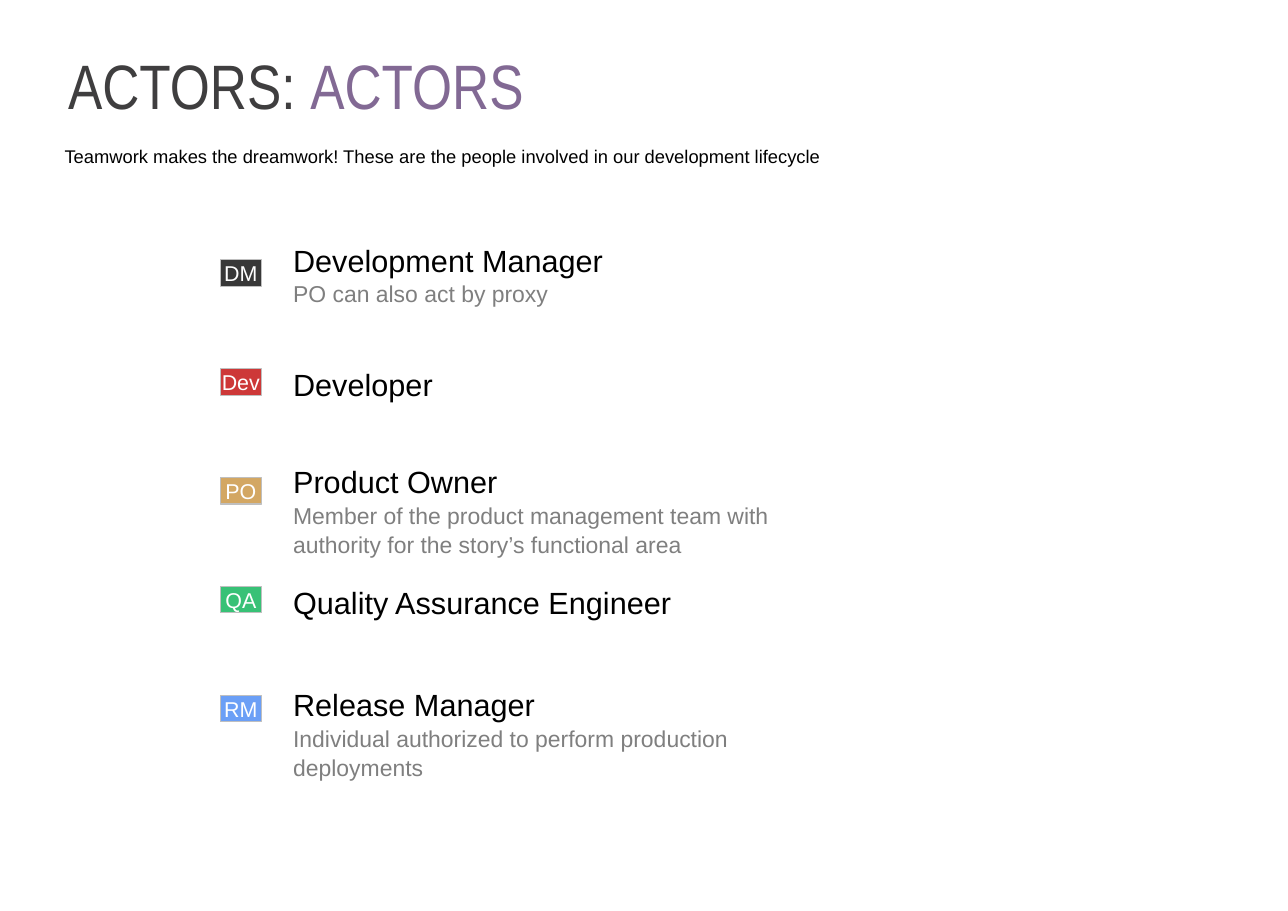
from lxml import etree
from pptx import Presentation
from pptx.dml.color import RGBColor
from pptx.enum.shapes import MSO_SHAPE
from pptx.enum.text import MSO_ANCHOR, PP_ALIGN
from pptx.oxml.ns import qn
from pptx.util import Cm, Pt

ACTORS = [
    ("DM", "000000", 5.36, 1.83, "Development Manager", "PO can also act by proxy"),
    ("Dev", "C00000", 8.23, 1.17, "Developer", ""),
    ("PO", "C78F38", 10.46, 2.46, "Product Owner",
     "Member of the product management team with authority for the story’s functional area"),
    ("QA", "00B050", 13.26, 1.17, "Quality Assurance Engineer", ""),
    ("RM", "4285F4", 15.6, 2.46, "Release Manager",
     "Individual authorized to perform production deployments"),
]
BADGE_TOP, BADGE_PITCH = 5.99, 2.51


def rgb(color):
    """Turn a hex string into a colour."""
    return RGBColor.from_string(color)


def add_run(p, text, size=20, color="000000", font="Arial"):
    """Append formatted text to a paragraph."""
    r = p.add_run()
    r.text = text
    r.font.size = Pt(size)
    r.font.name = font
    r.font.color.rgb = rgb(color)


def set_frame(tf, x_inset, y_inset, anchor=MSO_ANCHOR.TOP, wrap=True):
    """Set the insets, anchor and wrapping of a text frame."""
    tf.margin_left = tf.margin_right = Cm(x_inset)
    tf.margin_top = tf.margin_bottom = Cm(y_inset)
    tf.vertical_anchor = anchor
    tf.word_wrap = wrap


def add_title(s):
    """Fill the title placeholder with the two-coloured heading."""
    sp = s.shapes.title
    sp.left, sp.top, sp.width, sp.height = Cm(1.24), Cm(1.12), Cm(22.02), Cm(1.57)
    set_frame(sp.text_frame, 0.33, 0.16)
    p = sp.text_frame.paragraphs[0]
    p.alignment = PP_ALIGN.LEFT
    p.line_spacing = 0.9
    add_run(p, "ACTORS: ", size=41, color="3F3E3F", font="Arial Narrow")
    add_run(p, "ACTORS", size=41, color="826994", font="Arial Narrow")


def add_intro(s, text):
    """Add the sentence under the title."""
    tf = s.shapes.add_textbox(Cm(1.24), Cm(3.1), Cm(22.73), Cm(1.02)).text_frame
    set_frame(tf, 0.25, 0.25)
    add_run(tf.paragraphs[0], text, size=12)


def add_badge(s, text, color, top):
    """Add a translucent badge with an actor's initials."""
    sp = s.shapes.add_shape(MSO_SHAPE.RECTANGLE, Cm(5.08), Cm(top), Cm(0.95), Cm(0.61))
    sp.shadow.inherit = False
    sp.fill.solid()
    sp.fill.fore_color.rgb = rgb(color)
    clr = sp.fill._xPr.find(qn("a:solidFill"))[0]
    etree.SubElement(clr, qn("a:alpha"), val="78000")
    sp.line.color.rgb = rgb("BFBFBF")
    sp.line.width = Pt(0.75)
    set_frame(sp.text_frame, 0, 0, anchor=MSO_ANCHOR.MIDDLE, wrap=False)
    p = sp.text_frame.paragraphs[0]
    p.alignment = PP_ALIGN.CENTER
    add_run(p, text, size=14, color="FFFFFF")


def add_role(s, name, note, top, height):
    """Add an actor's role with an optional grey note."""
    tf = s.shapes.add_textbox(Cm(6.43), Cm(top), Cm(13.49), Cm(height)).text_frame
    set_frame(tf, 0.33, 0.16)
    p = tf.paragraphs[0]
    p.line_spacing = 1.06
    add_run(p, name)
    if note:
        p = tf.add_paragraph()
        p.line_spacing = 1.06
        add_run(p, note, size=15, color="7F7F7F")


def main():
    """Build the slide of actors."""
    prs = Presentation()
    prs.slide_width, prs.slide_height = Cm(29.7), Cm(21)
    s = prs.slides.add_slide(prs.slide_layouts[5])
    add_title(s)
    add_intro(s, "Teamwork makes the dreamwork! These are the people involved "
                 "in our development lifecycle")
    for i, (initials, color, top, height, name, note) in enumerate(ACTORS):
        add_badge(s, initials, color, BADGE_TOP + i * BADGE_PITCH)
        add_role(s, name, note, top, height)
    prs.save("out.pptx")


if __name__ == "__main__":
    main()
